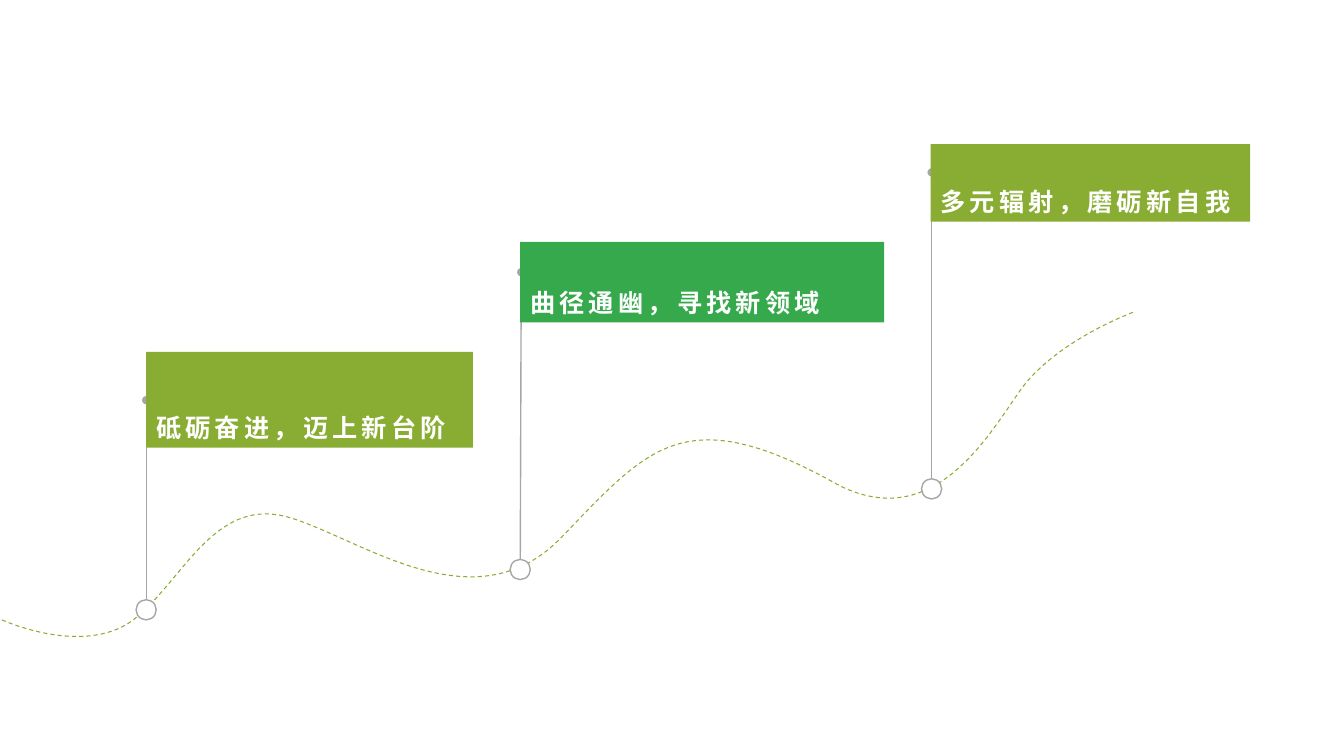
from dataclasses import dataclass

from lxml import etree
from pptx import Presentation
from pptx.dml.color import RGBColor
from pptx.enum import dml, shapes, text
from pptx.oxml.ns import qn
from pptx.shapes.base import BaseShape
from pptx.shapes.shapetree import SlideShapes
from pptx.util import Inches, Pt

Point = tuple[float, float]


@dataclass(frozen=True)
class Theme:
    olive: RGBColor = RGBColor(0x89, 0xAD, 0x32)
    green: RGBColor = RGBColor(0x36, 0xA9, 0x4C)
    grey: RGBColor = RGBColor(0xA6, 0xA6, 0xA6)
    white: RGBColor = RGBColor(0xFF, 0xFF, 0xFF)
    font: str = "Arial"
    label_size: int = 18
    letter_spacing: int = 3
    stem_width: float = 1
    path_width: float = 0.75


THEME = Theme()


@dataclass(frozen=True)
class Milestone:
    label: str
    fill: RGBColor
    left: float
    top: float
    width: float
    height: float
    line_spacing: float
    stem_foot: Point
    stem_head: Point
    dot_center: Point


MILESTONES = [
    Milestone("砥砺奋进，迈上新台阶", THEME.olive, 1.45, 3.49, 3.24, 0.95, 1.1,
              (1.45, 6), (1.45, 3.97), (1.45, 6.05)),
    Milestone("多元辐射，磨砺新自我", THEME.olive, 9.23, 1.43, 3.17, 0.77, 1.3,
              (9.24, 4.84), (9.24, 1.71), (9.24, 4.85)),
    Milestone("曲径通幽，寻找新领域", THEME.green, 5.16, 2.4, 3.61, 0.8, 1.3,
              (5.16, 5.64), (5.17, 2.7), (5.16, 5.65)),
]
DOT_SIZE = 0.2

# Winding path: a start point, then two controls and an end per Bézier segment
PATH_START: Point = (0.02, 6.15)
PATH_SEGMENTS: list[tuple[Point, Point, Point]] = [
    ((0.02, 6.15), (0.87, 6.54), (1.36, 6.12)),
    ((1.85, 5.7), (2.15, 4.91), (2.89, 5.14)),
    ((3.62, 5.37), (4.72, 6.21), (5.57, 5.33)),
    ((6.43, 4.44), (6.79, 3.95), (8.33, 4.82)),
    ((9.23, 5.26), (9.75, 4.41), (10.1, 3.9)),
    ((10.45, 3.38), (11.26, 3.09), (11.26, 3.09)),
]
PATH_HEIGHT = 3.23


def outline(sp: BaseShape, color: RGBColor, width: float) -> None:
    sp.line.color.rgb = color
    sp.line.width = Pt(width)


def add_stem(tree: SlideShapes, m: Milestone) -> None:
    ends = [Inches(v) for v in (*m.stem_foot, *m.stem_head)]
    stem = tree.add_connector(shapes.MSO_CONNECTOR.STRAIGHT, *ends)
    outline(stem, THEME.grey, THEME.stem_width)
    etree.SubElement(stem.line._get_or_add_ln(), qn("a:tailEnd"), type="oval")
    etree.SubElement(stem._element.spPr, qn("a:effectLst"))


def add_flag(tree: SlideShapes, m: Milestone) -> None:
    box = [Inches(v) for v in (m.left, m.top, m.width, m.height)]
    flag = tree.add_shape(shapes.MSO_SHAPE.RECTANGLE, *box)
    flag.shadow.inherit = False
    flag.fill.solid()
    flag.fill.fore_color.rgb = m.fill
    flag.line.fill.background()

    tf = flag.text_frame
    tf.word_wrap = True
    tf.vertical_anchor = text.MSO_ANCHOR.BOTTOM
    p = tf.paragraphs[0]
    p.alignment = text.PP_ALIGN.LEFT
    p.line_spacing = m.line_spacing
    r = p.add_run()
    r.text = m.label
    r.font.name = THEME.font
    r.font.size = Pt(THEME.label_size)
    r.font.bold = True
    r.font.color.rgb = THEME.white
    r.font._element.set("spc", str(THEME.letter_spacing * 100))


def add_path(tree: SlideShapes) -> None:
    start_x, start_y = (Inches(v) for v in PATH_START)
    builder = tree.build_freeform(start_x, start_y)
    builder.add_line_segments(
        [(Inches(x), Inches(y)) for _, _, (x, y) in PATH_SEGMENTS], close=False)
    curve = builder.convert_to_shape()
    curve.height = Inches(PATH_HEIGHT)

    # Bend each straight segment into a cubic Bézier
    track = next(curve._element.iter(qn("a:path")))
    track.set("h", str(curve.height))
    for line, controls in zip(track.findall(qn("a:lnTo")), PATH_SEGMENTS):
        bend = etree.Element(qn("a:cubicBezTo"))
        for x, y in controls:
            etree.SubElement(bend, qn("a:pt"), x=str(Inches(x) - curve.left),
                             y=str(Inches(y) - curve.top))
        track.replace(line, bend)

    curve.shadow.inherit = False
    curve.fill.background()
    outline(curve, THEME.olive, THEME.path_width)
    curve.line.dash_style = dml.MSO_LINE.DASH


def add_dot(tree: SlideShapes, m: Milestone) -> None:
    left, top = (Inches(v - DOT_SIZE / 2) for v in m.dot_center)
    size = Inches(DOT_SIZE)
    dot = tree.add_shape(shapes.MSO_SHAPE.OVAL, left, top, size, size)
    dot.shadow.inherit = False
    dot.fill.solid()
    dot.fill.fore_color.rgb = THEME.white
    outline(dot, THEME.grey, THEME.stem_width)


def main() -> None:
    prs = Presentation()
    prs.slide_width, prs.slide_height = Inches(13.33), Inches(7.5)
    tree = prs.slides.add_slide(prs.slide_layouts[6]).shapes

    # Flags on their stems
    for m in MILESTONES:
        add_stem(tree, m)
        add_flag(tree, m)

    # Dashed path, with the dots on top of it
    add_path(tree)
    for m in MILESTONES:
        add_dot(tree, m)

    prs.save("out.pptx")


if __name__ == "__main__":
    main()
